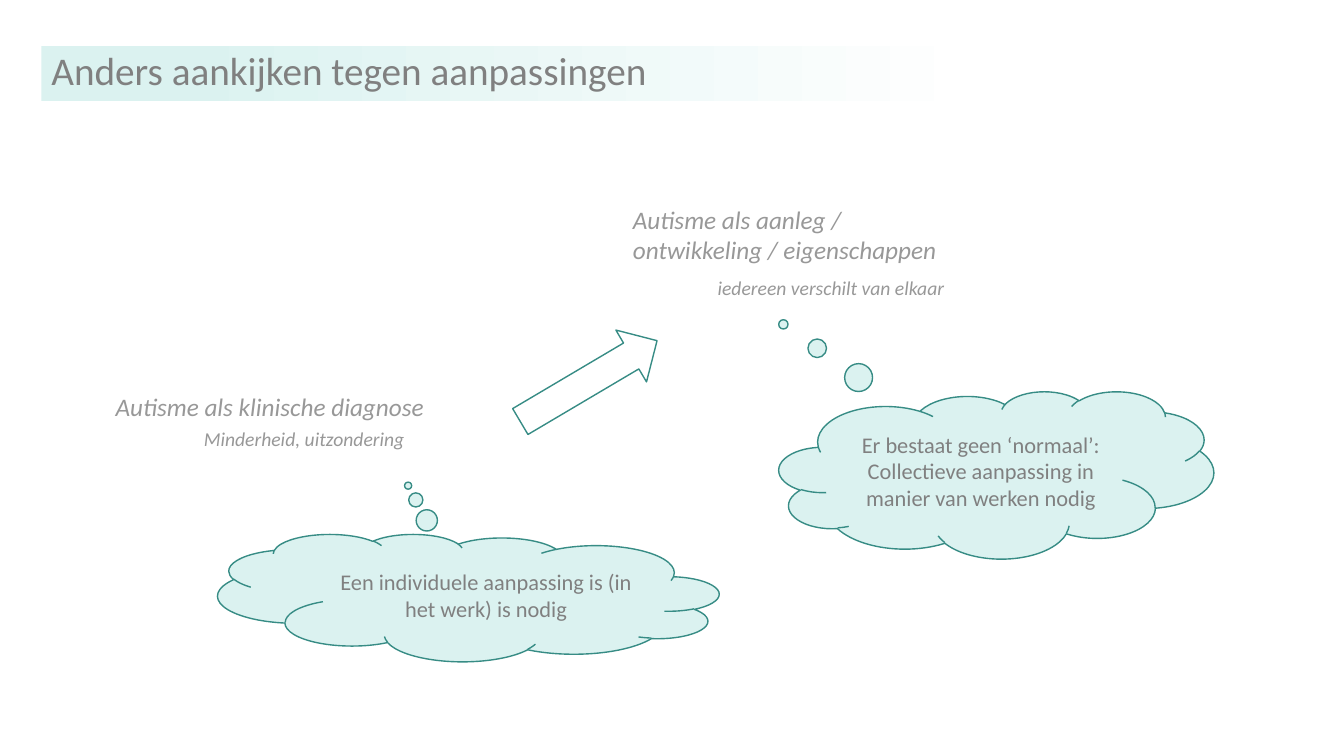
from dataclasses import dataclass

from pptx import Presentation
from pptx.dml.color import RGBColor
from pptx.enum.shapes import MSO_SHAPE as Preset
from pptx.enum.text import MSO_ANCHOR as Anchor, MSO_AUTO_SIZE as AutoSize, PP_ALIGN as Align
from pptx.oxml.ns import qn
from pptx.util import Pt

COLOURS = {"mint": "DBF2F0", "teal": "378C85", "white": "FFFFFF", "text": "808080", "caption": "989898"}
FONT = "Calibri"


@dataclass(frozen=True)
class Box:
    left: float
    top: float
    width: float
    height: float

    def lengths(self) -> tuple:
        return Pt(self.left), Pt(self.top), Pt(self.width), Pt(self.height)


@dataclass(frozen=True)
class Caption:
    text: str
    box: Box
    size: int


@dataclass(frozen=True)
class Cloud:
    text: str
    box: Box
    tail: tuple[float, float]
    flipped: bool = False


CAPTIONS = [
    Caption("Autisme als aanleg / ontwikkeling / eigenschappen", Box(445, 142.5, 239, 51), 18),
    Caption("Autisme als klinische diagnose", Box(75.5, 276, 251.5, 29), 18),
    Caption("Minderheid, uitzondering", Box(138.5, 301.5, 196.5, 24.5), 14),
    Caption("iedereen verschilt van elkaar", Box(505.5, 193.5, 196.5, 24.5), 14),
]
CLOUDS = [
    Cloud("Een individuele aanpassing is (in het werk) is nodig",
          Box(155.5, 381.5, 358, 91), (0.12, -0.88), flipped=True),
    Cloud("Er bestaat geen ‘normaal’:\nCollectieve aanpassing in manier van werken nodig",
          Box(556.5, 279.5, 310.5, 119.5), (-0.49, -0.9)),
]


def colour(name: str) -> RGBColor:
    return RGBColor.from_string(COLOURS[name])


def format_text(text_frame, size: int, colour_name: str, italic: bool = False) -> None:
    for paragraph in text_frame.paragraphs:
        for run in paragraph.runs:
            run.font.name = FONT
            run.font.size = Pt(size)
            run.font.italic = italic
            run.font.color.rgb = colour(colour_name)


def format_title(title, text: str, box: Box) -> None:
    title.left, title.top, title.width, title.height = box.lengths()
    title.fill.gradient()
    title.fill.gradient_angle = 0
    for stop, (position, name) in zip(title.fill.gradient_stops, [(0.12, "mint"), (0.78, "white")]):
        stop.position = position
        stop.color.rgb = colour(name)
    text_frame = title.text_frame
    text_frame.text = text
    text_frame.auto_size = AutoSize.NONE
    text_frame.vertical_anchor = Anchor.MIDDLE
    text_frame.paragraphs[0].alignment = Align.LEFT
    text_frame.paragraphs[0].line_spacing = 0.9
    format_text(text_frame, 28, "text")


def add_caption(slide, caption: Caption) -> None:
    text_frame = slide.shapes.add_textbox(*caption.box.lengths()).text_frame
    text_frame.word_wrap = True
    text_frame.auto_size = AutoSize.SHAPE_TO_FIT_TEXT
    text_frame.text = caption.text
    format_text(text_frame, caption.size, "caption", italic=True)


def add_outlined(slide, preset: Preset, box: Box):
    shape = slide.shapes.add_shape(preset, *box.lengths())
    shape.shadow.inherit = False
    shape.line.color.rgb = colour("teal")
    shape.line.width = Pt(1)
    return shape


def add_arrow(slide, box: Box, rotation: float) -> None:
    arrow = add_outlined(slide, Preset.UP_ARROW, box)
    arrow.fill.background()
    arrow.rotation = rotation


def add_cloud(slide, cloud: Cloud) -> None:
    shape = add_outlined(slide, Preset.CLOUD_CALLOUT, cloud.box)
    shape.fill.solid()
    shape.fill.fore_color.rgb = colour("mint")
    for index, value in enumerate(cloud.tail):
        shape.adjustments[index] = value
    if cloud.flipped:
        shape.element.spPr.find(qn("a:xfrm")).set("flipH", "1")
    text_frame = shape.text_frame
    text_frame.word_wrap = True
    text_frame.vertical_anchor = Anchor.MIDDLE
    text_frame.text = cloud.text
    for paragraph in text_frame.paragraphs:
        paragraph.alignment = Align.CENTER
    format_text(text_frame, 16, "text")


def main() -> None:
    presentation = Presentation()
    presentation.slide_width, presentation.slide_height = Pt(960), Pt(540)
    slide = presentation.slides.add_slide(presentation.slide_layouts[5])
    format_title(slide.shapes.title, "Anders aankijken tegen aanpassingen", Box(29.5, 32.5, 858, 39.5))
    for caption in CAPTIONS:
        add_caption(slide, caption)
    add_arrow(slide, Box(399, 215.5, 43, 113.5), 59.4)
    for cloud in CLOUDS:
        add_cloud(slide, cloud)
    presentation.save("out.pptx")


if __name__ == "__main__":
    main()
